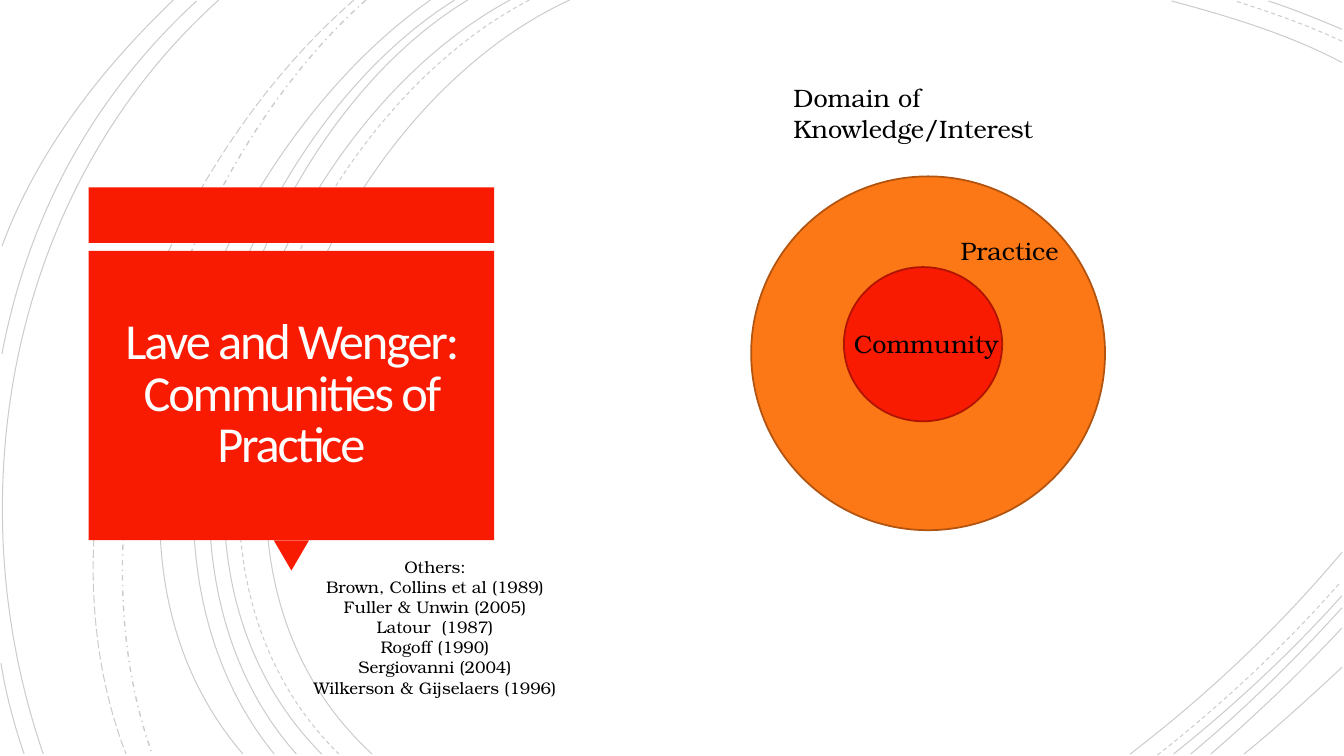
import pptx
import pptx.dml.color
import pptx.enum.dml
import pptx.enum.shapes
import pptx.enum.text
import pptx.oxml.ns
import pptx.util
from lxml import etree
from pptx.util import Inches

RED = pptx.dml.color.RGBColor(0xF8, 0x1B, 0x02)
DARK_RED = pptx.dml.color.RGBColor(0xAF, 0x13, 0x01)
ORANGE = pptx.dml.color.RGBColor(0xFC, 0x77, 0x15)
BROWN = pptx.dml.color.RGBColor(0xB2, 0x54, 0x0F)
BLACK = pptx.dml.color.RGBColor(0, 0, 0)
OFF_WHITE = pptx.dml.color.RGBColor(0xFF, 0xFE, 0xFF)

SERIF = "TeX Gyre Bonum"
SHAPES = pptx.enum.shapes.MSO_SHAPE
DASHES = pptx.enum.dml.MSO_LINE
CENTER = pptx.enum.text.PP_ALIGN.CENTER
MIDDLE = pptx.enum.text.MSO_ANCHOR.MIDDLE

# Each arc: start, two control points, end
SOLID_ARCS = [
    [(5.65, 0), (3.15, 1.15), (1.43, 5.4), (3.69, 7.48)],
    [(13.31, 0.62), (12.78, 0.34), (12.18, 0.16), (11.62, 0.01)],
    [(11.21, 7.48), (11.97, 6.9), (12.69, 6.22), (13.31, 5.48)],
    [(5.06, 0), (2.7, 1.27), (1.1, 5.37), (3.19, 7.48)],
    [(13.31, 0.29), (13.07, 0.19), (12.83, 0.09), (12.58, 0.01)],
    [(11.64, 7.48), (12.23, 7.01), (12.8, 6.48), (13.31, 5.91)],
    [(4.64, 0), (2.44, 1.33), (1.1, 5.41), (2.94, 7.48)],
    [(11.81, 7.48), (12.34, 7.04), (12.84, 6.55), (13.31, 6.03)],
    [(4.51, 0), (2.31, 1.38), (0.97, 5.33), (2.72, 7.48)],
    [(12.01, 7.48), (12.46, 7.09), (12.9, 6.67), (13.31, 6.23)],
    [(4.27, 0), (2.17, 1.47), (0.53, 5.29), (2.41, 7.48)],
    [(12.34, 7.48), (12.67, 7.21), (12.99, 6.92), (13.31, 6.62)],
    [(2.17, 0), (0.11, 1.85), (-0.46, 4.9), (0.43, 7.48)],
    [(1.95, 0.01), (0.92, 0.96), (0.28, 2.14), (0.02, 3.51)],
    [(0.01, 6.58), (0.06, 6.89), (0.14, 7.19), (0.24, 7.48)],
    [(1.72, 0), (1, 0.69), (0.37, 1.5), (0.02, 2.44)],
]
DASHED_ARCS = [
    [(5.25, 0), (2.85, 1.25), (1.23, 5.37), (3.36, 7.48)],
    [(13.31, 0.41), (12.97, 0.25), (12.6, 0.12), (12.25, 0.01)],
    [(11.48, 7.49), (12.13, 6.98), (12.75, 6.4), (13.3, 5.77)],
]
DASH_DOT_ARCS = [[(3.63, 0), (1.76, 1.66), (0.65, 5.09), (1.51, 7.48)]]
LONG_DASH_ARCS = [[(3.51, 0), (1.57, 1.69), (0.29, 4.99), (1.25, 7.48)]]

AUTHORS = [
    "Others:",
    "Brown, Collins et al (1989)",
    "Fuller & Unwin (2005)",
    "Latour  (1987)",
    "Rogoff (1990)",
    "Sergiovanni (2004)",
    "Wilkerson & Gijselaers (1996)",
]


def add_text(slide, text, left, top, width, height, size=18, font=SERIF,
             color=BLACK, align=None, anchor=None, inset=None,
             line_spacing=None, letter_spacing=None):
    """Add a text box; each line of the text becomes a paragraph."""
    box = slide.shapes.add_textbox(
        Inches(left), Inches(top), Inches(width), Inches(height))
    frame = box.text_frame
    frame.word_wrap = True
    frame.vertical_anchor = anchor
    if inset is not None:
        frame.margin_left = frame.margin_right = Inches(inset)
        frame.margin_top = frame.margin_bottom = Inches(inset)
    frame.text = text
    for paragraph in frame.paragraphs:
        paragraph.alignment = align
        paragraph.line_spacing = line_spacing
        run = paragraph.runs[0]
        run.font.size = pptx.util.Pt(size)
        run.font.name = font
        run.font.color.rgb = color
        if letter_spacing is not None:
            run.font._element.set("spc", str(round(letter_spacing * 100)))


def add_filled(slide, kind, left, top, width, height, fill, outline=None):
    shape = slide.shapes.add_shape(
        kind, Inches(left), Inches(top), Inches(width), Inches(height))
    shape.shadow.inherit = False
    shape.fill.solid()
    shape.fill.fore_color.rgb = fill
    if outline is None:
        shape.line.fill.background()
    else:
        shape.line.color.rgb = outline
        shape.line.width = pptx.util.Pt(1.25)
    return shape


def add_arc(slide, points, dash, weight):
    """Draw one Bezier curve as a faint, unfilled line."""
    start, *rest = [(Inches(x), Inches(y)) for x, y in points]
    builder = slide.shapes.build_freeform(*start)
    builder.add_line_segments(rest, close=False)
    arc = builder.convert_to_shape()
    arc.shadow.inherit = False
    arc.fill.background()
    arc.line.color.rgb = BLACK
    arc.line.width = pptx.util.Pt(weight)
    arc.line.dash_style = dash

    qn = pptx.oxml.ns.qn
    outline = next(arc._element.iter(qn("a:path")))
    segments = outline.findall(qn("a:lnTo"))
    curve = etree.SubElement(outline, qn("a:cubicBezTo"))
    for segment in segments:
        curve.append(segment[0])
        outline.remove(segment)
    line_color = next(arc.line._ln.iter(qn("a:srgbClr")))
    etree.SubElement(line_color, qn("a:alpha"), val="20000")


def add_background_arcs(slide, left, top):
    for arcs, dash, weight in [
        (SOLID_ARCS, DASHES.SOLID, 0.75),
        (DASHED_ARCS, DASHES.DASH, 0.75),
        (DASH_DOT_ARCS, DASHES.DASH_DOT, 1),
        (LONG_DASH_ARCS, DASHES.LONG_DASH, 0.75),
    ]:
        for points in arcs:
            add_arc(slide, [(left + x, top + y) for x, y in points], dash, weight)


def add_title_callout(slide, title, left, top, width, height):
    """Red banner above a red panel with a pointer at its foot."""
    banner_height, gap, pointer_width, pointer_height = 0.55, 0.08, 0.35, 0.3
    panel_top = top + banner_height + gap
    panel_height = height - banner_height - gap - pointer_height
    add_filled(slide, SHAPES.RECTANGLE, left, top, width, banner_height, RED)
    pointer = add_filled(
        slide, SHAPES.ISOSCELES_TRIANGLE, left + (width - pointer_width) / 2,
        panel_top + panel_height, pointer_width, pointer_height, RED)
    pointer.rotation = 180
    add_filled(slide, SHAPES.RECTANGLE, left, panel_top, width, panel_height, RED)
    margin = 0.09
    add_text(slide, title, left + margin, panel_top + margin,
             width - 2 * margin, panel_height - 2 * margin,
             size=36, font="Calibri", color=OFF_WHITE, align=CENTER,
             anchor=MIDDLE, inset=0.25, line_spacing=0.85, letter_spacing=-1.5)


def add_community_diagram(slide, left, top, diameter):
    """Nested circles: community within practice within a domain."""
    add_filled(slide, SHAPES.OVAL, left, top, diameter, diameter, ORANGE, BROWN)
    add_filled(slide, SHAPES.OVAL, left + 0.92, top + 0.9, 1.57, 1.53, RED, DARK_RED)
    for label, dx, dy, width, height in [
        ("Domain of Knowledge/Interest", 0.32, -0.98, 3.01, 0.71),
        ("Practice", 1.98, 0.54, 1.36, 0.4),
        ("Community", 0.92, 1.46, 1.67, 0.4),
    ]:
        add_text(slide, label, left + dx, top + dy, width, height)


def main():
    deck = pptx.Presentation()
    deck.slide_width, deck.slide_height = Inches(13.33), Inches(7.5)
    slide = deck.slides.add_slide(deck.slide_layouts[6])
    add_background_arcs(slide, 0, 0)
    add_title_callout(slide, "Lave and Wenger: Communities of Practice",
                      0.88, 1.86, 4.02, 3.8)
    add_community_diagram(slide, 7.45, 1.75, 3.51)
    add_text(slide, "\n".join(AUTHORS), 2.13, 5.47, 4.37, 1.82,
             size=12, align=CENTER)
    deck.save("out.pptx")


if __name__ == "__main__":
    main()
